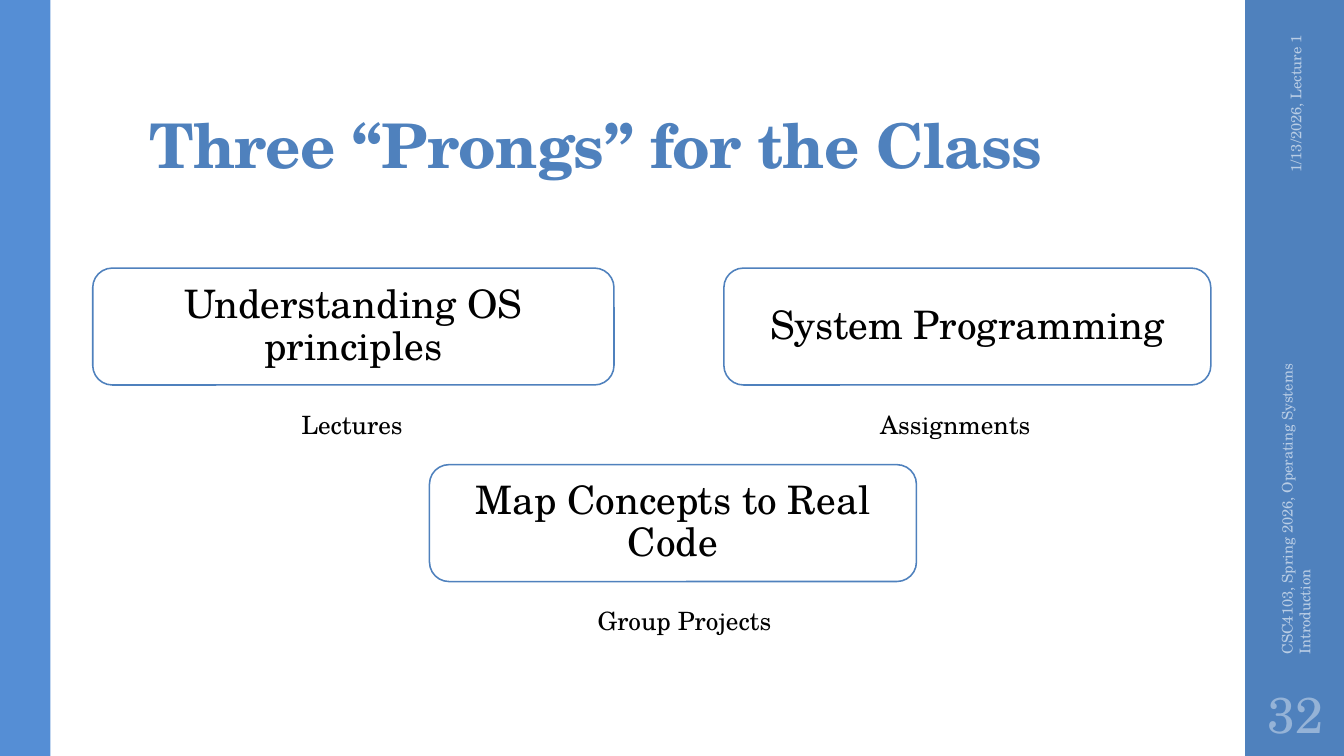
"""Build the slide on the three prongs of the class."""
import pptx
import pptx.dml.color
import pptx.enum.shapes
import pptx.enum.text
import pptx.util

Inches = pptx.util.Inches
Pt = pptx.util.Pt
SHAPE = pptx.enum.shapes.MSO_SHAPE
ALIGN = pptx.enum.text.PP_ALIGN
ANCHOR = pptx.enum.text.MSO_ANCHOR


def rgb(value):
    return pptx.dml.color.RGBColor.from_string(value)


def write(sp, text, size=18, color="000000", bold=False, align=ALIGN.LEFT,
          anchor=ANCHOR.MIDDLE, spacing=None, tracking=None, wrap=True,
          margins=(0.1, 0.05, 0.1, 0.05), font="TeX Gyre Schola"):
    tf = sp.text_frame
    tf.word_wrap = wrap
    tf.vertical_anchor = anchor
    tf.margin_left, tf.margin_top, tf.margin_right, tf.margin_bottom = map(Inches, margins)
    p = tf.paragraphs[0]
    p.alignment = align
    p.line_spacing = spacing
    r = p.add_run()
    r.text = text
    r.font.name = font
    r.font.size = Pt(size)
    r.font.bold = bold
    r.font.color.rgb = rgb(color)
    if tracking is not None:
        r._r.get_or_add_rPr().set("spc", str(round(tracking * 100)))


class Deck:
    accent = "4F81BD"
    edge = "558ED5"
    pale = "B9CDE5"
    number = "95B3D7"

    def __init__(self):
        self.prs = pptx.Presentation()
        self.prs.slide_width = Inches(13.33)
        self.prs.slide_height = Inches(7.5)
        self.s = self.prs.slides.add_slide(self.prs.slide_layouts[5])

    def title(self, text, box):
        sp = self.s.shapes.title
        sp.left, sp.top, sp.width, sp.height = map(Inches, box)
        write(sp, text, size=44, color=self.accent, bold=True, anchor=ANCHOR.BOTTOM,
              spacing=0.9, tracking=-0.5, margins=(0.1, 0.03, 0.1, 0.05))

    def shape(self, kind, box, fill, line=None):
        sp = self.s.shapes.add_shape(kind, *map(Inches, box))
        sp.shadow.inherit = False
        sp.fill.solid()
        sp.fill.fore_color.rgb = rgb(fill)
        if line:
            sp.line.color.rgb = rgb(line)
            sp.line.width = Pt(1.1)
        else:
            sp.line.fill.background()
        return sp

    def bar(self, left, width, fill):
        self.shape(SHAPE.RECTANGLE, (left, 0, width, 7.5), fill)

    def card(self, text, box):
        sp = self.shape(SHAPE.ROUNDED_RECTANGLE, box, "FFFFFF", self.accent)
        write(sp, text, size=28, align=ALIGN.CENTER, spacing=0.9)

    def text(self, text, box, rotation=0, **style):
        sp = self.s.shapes.add_textbox(*map(Inches, box))
        sp.rotation = rotation
        write(sp, text, **style)


def main():
    deck = Deck()
    deck.bar(12.35, 1, deck.accent)
    deck.bar(0, 0.5, deck.edge)
    deck.title("Three “Prongs” for the Class", (1.38, 0.32, 10.6, 1.53))

    prongs = [
        ("Understanding OS principles", 0.92, 2.66, 5.17, "Lectures", 2.89, 1.22),
        ("System Programming", 7.18, 2.66, 4.83, "Assignments", 8.63, 1.71),
        ("Map Concepts to Real Code", 4.26, 4.61, 4.83, "Group Projects", 5.83, 1.94),
    ]
    for goal, left, top, width, means, means_left, means_width in prongs:
        deck.card(goal, (left, top, width, 1.16))
        deck.text(means, (means_left, top + 1.35, means_width, 0.4),
                  anchor=ANCHOR.TOP, wrap=False)

    deck.text("1/13/2026, Lecture 1", (11.81, 1.09, 2.08, 0.4), rotation=270,
              size=10.5, color=deck.pale, align=ALIGN.RIGHT)
    deck.text("CSC4103, Spring 2026, Operating Systems Introduction",
              (10.89, 4.43, 3.92, 0.4), rotation=270, size=10.5, color=deck.pale)
    deck.text("32", (12.35, 6.75, 1, 0.65), size=36, color=deck.number,
              align=ALIGN.CENTER, margins=(0.05, 0.05, 0.05, 0.05))
    deck.prs.save("out.pptx")


if __name__ == "__main__":
    main()
